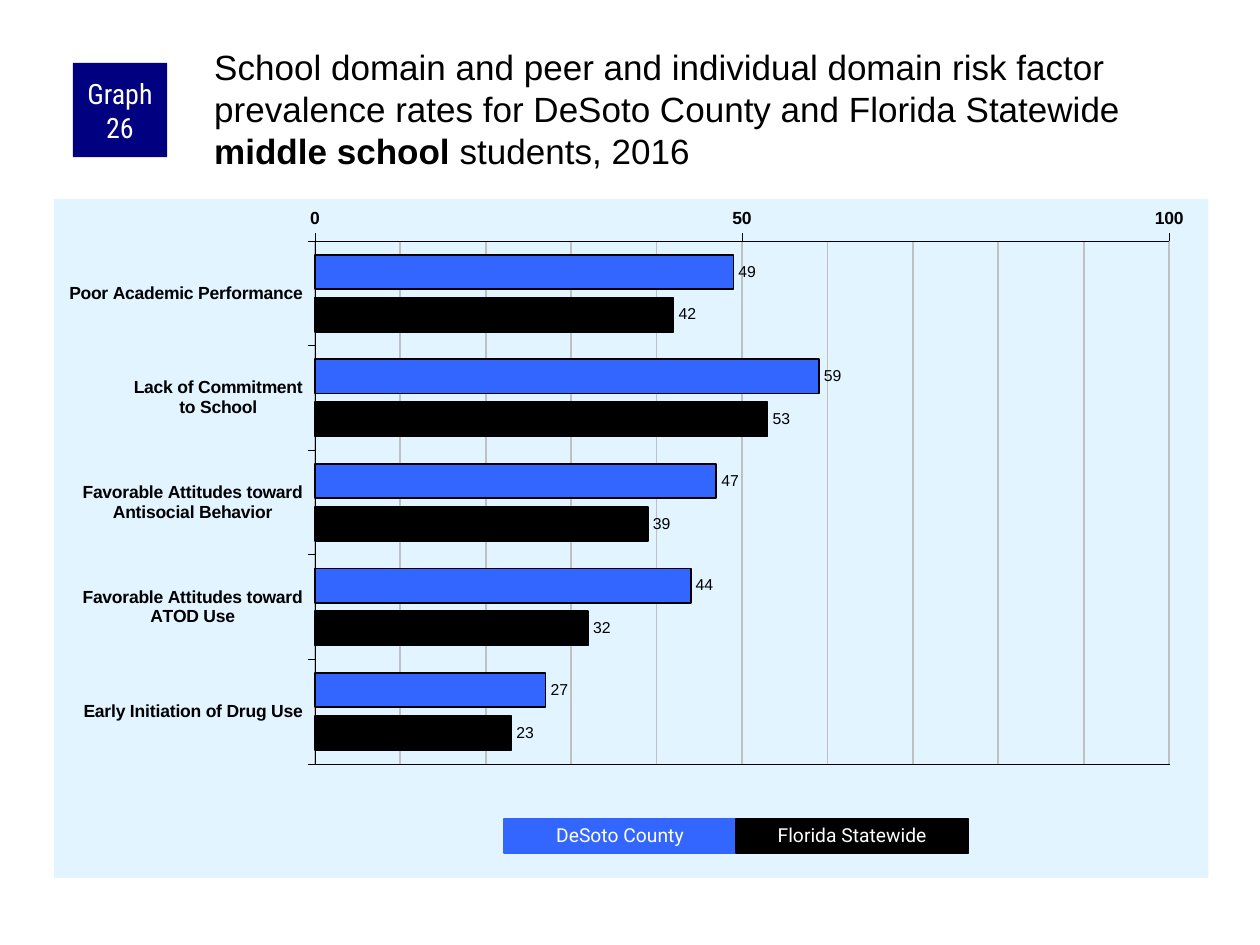
from dataclasses import dataclass

from pptx import Presentation
from pptx import util as u
from pptx.chart.data import CategoryChartData
from pptx.dml.color import RGBColor
from pptx.enum import chart as charts, shapes, text
from pptx.oxml import ns, parse_xml


@dataclass(frozen=True)
class Theme:
    """Colours, fonts and type sizes of the slide."""
    ink: str = "000000"
    paper: str = "FFFFFF"
    navy: str = "000080"
    county: str = "3366FF"
    state: str = "000000"
    panel: str = "E1F4FF"
    grid: str = "C0C0C0"
    body: str = "Arial"
    badge_font: str = "Roboto Condensed"
    key_font: str = "Roboto"
    title_size: float = 20
    badge_size: float = 16
    key_size: float = 11
    axis_size: float = 10
    label_size: float = 9


THEME = Theme()
RISK_FACTORS = {
    "Poor Academic Performance": (49, 42),
    "Lack of Commitment\nto School": (59, 53),
    "Favorable Attitudes toward\nAntisocial Behavior": (47, 39),
    "Favorable Attitudes toward\nATOD Use": (44, 32),
    "Early Initiation of Drug Use": (27, 23),
}
AREAS = (("DeSoto County", THEME.county), ("Florida Statewide", THEME.state))


def rgb(colour):
    """Return a hex string as a colour."""
    return RGBColor.from_string(colour)


def set_font(font, size, colour=THEME.ink, name=THEME.body, bold=False):
    """Format one font."""
    font.size, font.name, font.bold = u.Pt(size), name, bold
    font.color.rgb = rgb(colour)


def set_line(line, colour, width):
    """Give a line a solid colour and a width in points."""
    line.color.rgb = rgb(colour)
    line.width = u.Pt(width)


def write(frame, *parts, size, font, colour=THEME.ink, align=text.PP_ALIGN.LEFT,
          anchor=text.MSO_ANCHOR.TOP, margins=(0.25, 0.13, 0.25, 0.13), spacing=1.0):
    """Write (wording, bold) parts as one formatted paragraph."""
    frame.word_wrap = True
    frame.vertical_anchor = anchor
    (frame.margin_left, frame.margin_top,
     frame.margin_right, frame.margin_bottom) = map(u.Cm, margins)
    paragraph = frame.paragraphs[0]
    paragraph.alignment = align
    paragraph.line_spacing = spacing
    for wording, bold in parts:
        run = paragraph.add_run()
        run.text = wording
        set_font(run.font, size, colour, font, bold)


def add_block(slide, box, colour, wording, line_width=0, **style):
    """Add a filled rectangle with centred white wording."""
    block = slide.shapes.add_shape(shapes.MSO_SHAPE.RECTANGLE, *map(u.Cm, box))
    block.shadow.inherit = False
    block.fill.solid()
    block.fill.fore_color.rgb = rgb(colour)
    if line_width:
        set_line(block.line, colour, line_width)
    else:
        block.line.fill.background()
    write(block.text_frame, (wording, False), colour=THEME.paper,
          align=text.PP_ALIGN.CENTER, anchor=text.MSO_ANCHOR.MIDDLE, **style)


def chart_xml(tag, content):
    """Build a chart element from its inner XML."""
    return parse_xml(f"<c:{tag} {ns.nsdecls('c', 'a')}>{content}</c:{tag}>")


def solid(colour):
    """Return the XML of a solid fill."""
    return f'<a:solidFill><a:srgbClr val="{colour}"/></a:solidFill>'


def outline(colour, width):
    """Return the XML of a solid line."""
    return f'<a:ln w="{u.Pt(width)}">{solid(colour)}</a:ln>'


def frame_plot(chart, **place):
    """Place the plot, outline it and fill the panel behind it."""
    space = chart._chartSpace
    plot_area = space.chart.plotArea
    for layout in plot_area.findall(ns.qn("c:layout")):
        plot_area.remove(layout)
    rules = {"layoutTarget": "inner", "xMode": "edge", "yMode": "edge", **place}
    manual = "".join(f'<c:{key} val="{value}"/>' for key, value in rules.items())
    plot_area.insert(0, chart_xml("layout", f"<c:manualLayout>{manual}</c:manualLayout>"))
    plot_area.append(chart_xml("spPr", f"<a:noFill/>{outline(THEME.ink, 0.25)}"))
    space.chart.addnext(chart_xml(
        "spPr", f"{solid(THEME.panel)}<a:ln><a:noFill/></a:ln>"))


def style_axes(chart):
    """Run risk factors downwards over a 0 to 100 scale."""
    factors, rates = chart.category_axis, chart.value_axis
    for axis in (factors, rates):
        set_font(axis.tick_labels.font, THEME.axis_size, bold=True)
        set_line(axis.format.line, THEME.ink, 0.25)
        axis.major_tick_mark = charts.XL_TICK_MARK.OUTSIDE
        axis.minor_tick_mark = charts.XL_TICK_MARK.NONE
    factors.reverse_order = True
    factors.crosses = charts.XL_AXIS_CROSSES.MAXIMUM
    rates.minimum_scale, rates.maximum_scale = 0, 100
    rates.major_unit, rates.minor_unit = 50, 10
    rates.has_major_gridlines = rates.has_minor_gridlines = True
    set_line(rates.major_gridlines.format.line, THEME.grid, 1)
    for minor_gridlines in chart._chartSpace.iter(ns.qn("c:minorGridlines")):
        minor_gridlines.append(chart_xml("spPr", outline(THEME.grid, 1)))


def style_series(series, colour):
    """Colour one area's bars and label them with their values."""
    series.format.fill.solid()
    series.format.fill.fore_color.rgb = rgb(colour)
    set_line(series.format.line, THEME.ink, 1)
    labels = series.data_labels
    labels.show_value = True
    labels.position = charts.XL_LABEL_POSITION.OUTSIDE_END
    set_font(labels.font, THEME.label_size)


def add_rates_chart(slide, box):
    """Add the bar chart of prevalence rates."""
    rates = CategoryChartData()
    rates.categories = list(RISK_FACTORS)
    for (area, _), values in zip(AREAS, zip(*RISK_FACTORS.values())):
        rates.add_series(area, values)
    chart = slide.shapes.add_chart(
        charts.XL_CHART_TYPE.BAR_CLUSTERED, *map(u.Cm, box), rates).chart
    chart.has_title = chart.has_legend = False
    set_font(chart.font, THEME.axis_size)
    plot = chart.plots[0]
    plot.vary_by_categories = False
    plot.gap_width, plot.overlap = 80, -25
    for series, (_, colour) in zip(plot.series, AREAS):
        style_series(series, colour)
    style_axes(chart)
    frame_plot(chart, x=0.226, y=0.062, w=0.74, h=0.77)


def add_title(slide, box):
    """Add the slide's heading."""
    heading = slide.shapes.add_textbox(*map(u.Cm, box))
    write(heading.text_frame,
          ("School domain and peer and individual domain risk factor prevalence "
           "rates for DeSoto County and Florida Statewide ", False),
          ("middle school", True), (" students, 2016", False),
          size=THEME.title_size, font=THEME.body, margins=(0.08, 0.08, 0, 0))


def main():
    """Build and save the slide."""
    deck = Presentation()
    deck.slide_width, deck.slide_height = u.Cm(25.4), u.Cm(19.05)
    slide = deck.slides.add_slide(deck.slide_layouts[6])
    add_rates_chart(slide, (1.09, 4.01, 23.27, 13.69))
    add_block(slide, (1.47, 1.27, 1.9, 1.9), THEME.navy, "Graph 26",
              size=THEME.badge_size, font=THEME.badge_font, margins=(0.13, 0, 0.13, 0))
    add_title(slide, (4.24, 0.84, 20.12, 2.11))
    key_width = 4.68
    for place, (area, colour) in enumerate(AREAS):
        add_block(slide, (10.16 + place * key_width, 16.51, key_width, 0.69), colour, area,
                  line_width=0.75, size=THEME.key_size, font=THEME.key_font, spacing=0.9)
    deck.save("out.pptx")


if __name__ == "__main__":
    main()
